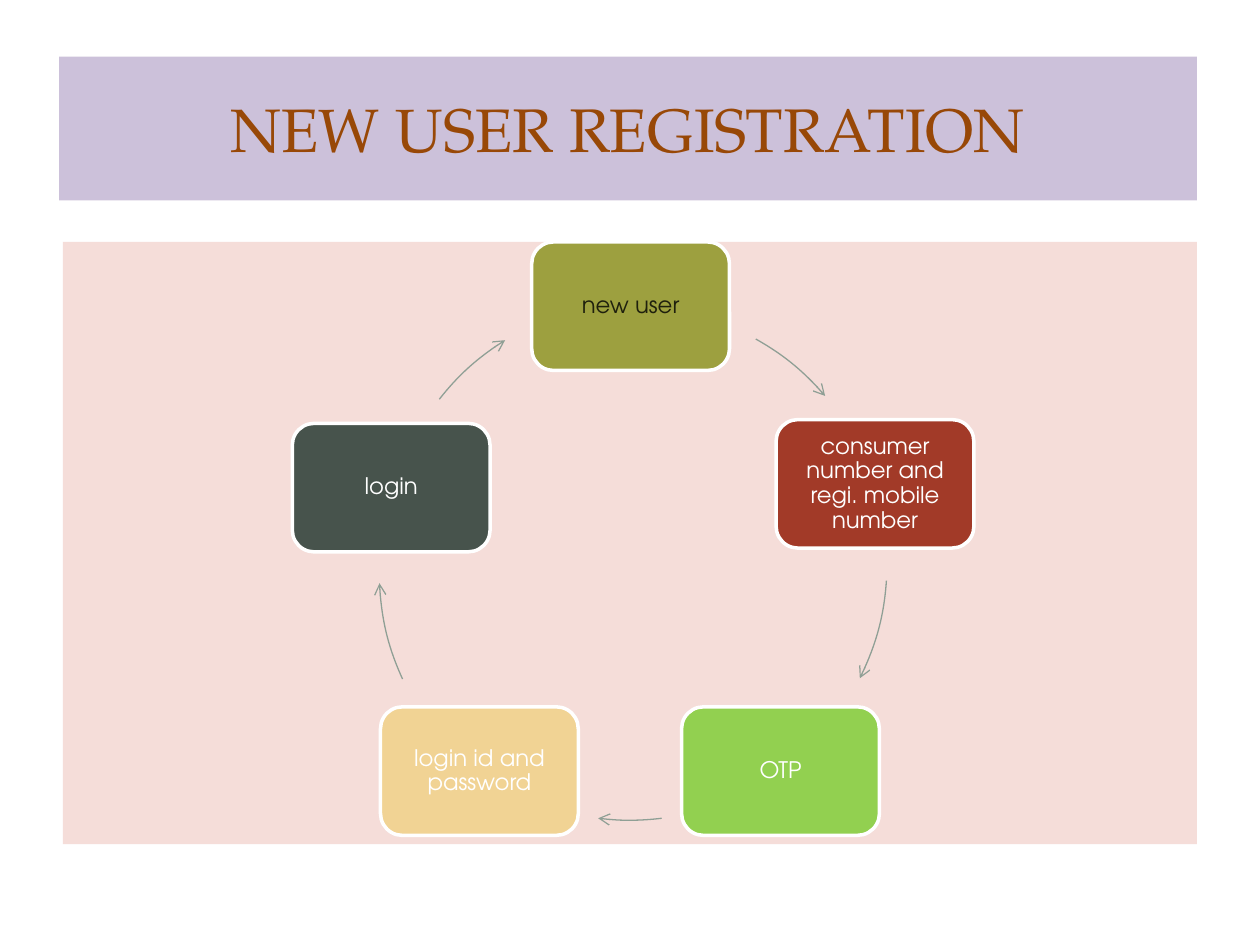
"""Build a slide that shows new user registration as a five-step cycle."""
from dataclasses import dataclass

from lxml import etree
from pptx import Presentation
from pptx import util as u
from pptx.dml.color import RGBColor
from pptx.enum import shapes, text
from pptx.oxml import ns
from pptx.shapes.autoshape import Shape
from pptx.slide import Slide

EMU_PER_PX = 9144
HEADING_FONT = "TeX Gyre Pagella"
BODY_FONT = "TeX Gyre Adventor"
LILAC = RGBColor(0xCC, 0xC1, 0xDA)
BROWN = RGBColor(0x98, 0x48, 0x07)
PINK = RGBColor(0xF5, 0xDD, 0xD9)
OLIVE = RGBColor(0x9D, 0xA0, 0x3F)
DARK_OLIVE = RGBColor(0x1F, 0x20, 0x0D)
RED = RGBColor(0xA2, 0x3A, 0x28)
GREEN = RGBColor(0x92, 0xD0, 0x50)
SAND = RGBColor(0xF1, 0xD3, 0x94)
SLATE = RGBColor(0x47, 0x53, 0x4C)
GREY = RGBColor(0x8F, 0x9F, 0x95)
WHITE = RGBColor(0xFF, 0xFF, 0xFF)
STEP_WIDTH, STEP_HEIGHT = 157, 102
CYCLE_DIAMETER = 408


@dataclass(frozen=True)
class Step:
    """A rounded box of the cycle, placed in px."""
    label: str
    left: int
    top: int
    fill: RGBColor
    color: RGBColor = WHITE


@dataclass(frozen=True)
class Arrow:
    """A clockwise arc between two angles in degrees, on a circle placed in px."""
    left: int
    top: int
    start: float
    end: float


STEPS = (
    Step("new user", 422, 192, OLIVE, DARK_OLIVE),
    Step("consumer number and regi. mobile number", 616, 333, RED),
    Step("OTP", 541, 561, GREEN),
    Step("login id and password", 302, 561, SAND),
    Step("login", 232, 336, SLATE),
)
ARROWS = (
    Arrow(296, 243, 299.3, 319.4),
    Arrow(296, 243, 3.9, 26.6),
    Arrow(296, 243, 82.9, 97.1),
    Arrow(301, 250, 155.4, 177.5),
    Arrow(305, 239, 218.2, 238),
)


def px(length: int) -> u.Emu:
    """Turn px into EMU."""
    return u.Emu(length * EMU_PER_PX)


def add_shape(slide: Slide, kind: shapes.MSO_SHAPE, left: int, top: int,
              width: int, height: int) -> Shape:
    """Add a preset shape without shadow."""
    shape = slide.shapes.add_shape(kind, px(left), px(top), px(width), px(height))
    shape.shadow.inherit = False
    return shape


def add_panel(slide: Slide, left: int, top: int, width: int, height: int,
              fill: RGBColor) -> Shape:
    """Add a filled rectangle without outline."""
    panel = add_shape(slide, shapes.MSO_SHAPE.RECTANGLE, left, top, width, height)
    panel.fill.solid()
    panel.fill.fore_color.rgb = fill
    panel.line.fill.background()
    return panel


def write(shape: Shape, label: str, font: str, size: int, color: RGBColor):
    """Write centred text in a shape and return its paragraph."""
    frame = shape.text_frame
    frame.word_wrap = True
    frame.vertical_anchor = text.MSO_ANCHOR.MIDDLE
    paragraph = frame.paragraphs[0]
    paragraph.text = label
    paragraph.alignment = text.PP_ALIGN.CENTER
    paragraph.font.name = font
    paragraph.font.size = u.Pt(size)
    paragraph.font.color.rgb = color
    return paragraph


def add_step(slide: Slide, step: Step) -> None:
    """Add one labelled box of the cycle."""
    box = add_shape(slide, shapes.MSO_SHAPE.ROUNDED_RECTANGLE,
                    step.left, step.top, STEP_WIDTH, STEP_HEIGHT)
    box.adjustments[0] = 0.17
    box.fill.solid()
    box.fill.fore_color.rgb = step.fill
    box.line.color.rgb = WHITE
    box.line.width = u.Pt(2)
    frame = box.text_frame
    frame.margin_left = frame.margin_right = px(5)
    frame.margin_top = frame.margin_bottom = px(5)
    paragraph = write(box, step.label, BODY_FONT, 13, step.color)
    paragraph.line_spacing = 0.9
    paragraph.space_after = u.Pt(5)


def add_arrow(slide: Slide, arrow: Arrow) -> None:
    """Add one curved arrow of the cycle."""
    arc = add_shape(slide, shapes.MSO_SHAPE.ARC, arrow.left, arrow.top,
                    CYCLE_DIAMETER, CYCLE_DIAMETER)
    for index, degrees in enumerate((arrow.start, arrow.end)):
        arc.adjustments[index] = degrees * 0.6
    arc.fill.background()
    arc.line.color.rgb = GREY
    arc.line.width = u.Pt(0.75)
    line = arc.line._get_or_add_ln()
    etree.SubElement(line, ns.qn("a:tailEnd"), type="arrow")


def main() -> None:
    """Build and save the slide."""
    presentation = Presentation()
    presentation.slide_width, presentation.slide_height = px(1000), px(750)
    slide = presentation.slides.add_slide(presentation.slide_layouts[6])
    heading = add_panel(slide, 47, 45, 903, 114, LILAC)
    write(heading, "NEW USER REGISTRATION", HEADING_FONT, 35, BROWN)
    add_panel(slide, 50, 192, 900, 478, PINK)
    for step, arrow in zip(STEPS, ARROWS):
        add_step(slide, step)
        add_arrow(slide, arrow)
    presentation.save("out.pptx")


if __name__ == "__main__":
    main()
